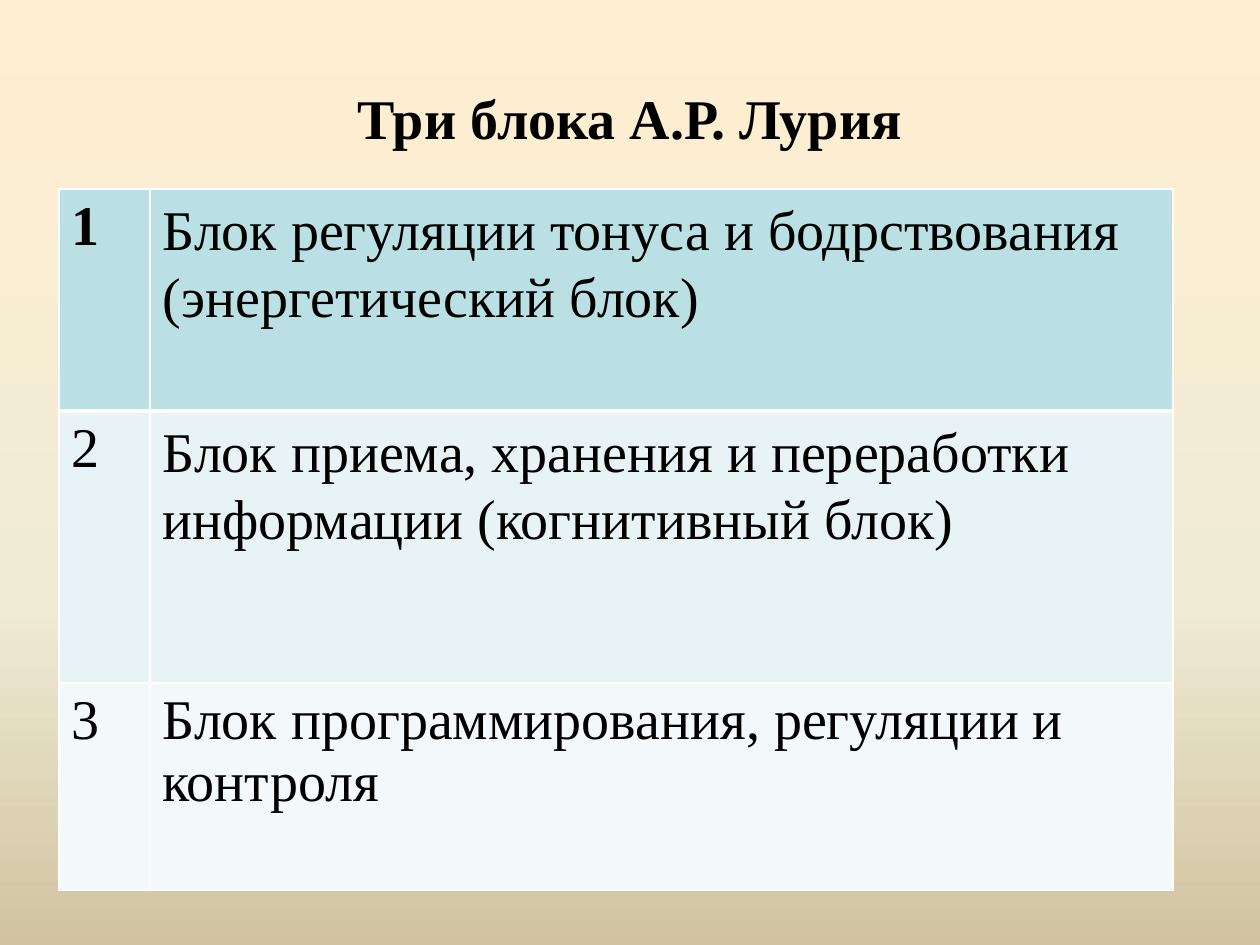
from copy import deepcopy

from lxml.etree import fromstring
from pptx import Presentation
from pptx.dml.color import RGBColor
from pptx.enum.text import MSO_ANCHOR, PP_ALIGN
from pptx.oxml.ns import nsdecls
from pptx.util import Emu, Pt

COLORS = {
    "cream": "FFEFD1",
    "ivory": "F0EBD5",
    "sand": "D1C39F",
    "text": "000000",
    "border": "FFFFFF",
}
BLOCKS = [
    ("Блок регуляции тонуса и бодрствования (энергетический блок)", 222, "BBE0E3"),
    ("Блок приема, хранения и переработки информации (когнитивный блок)", 272, "E7F3F4"),
    ("Блок программирования, регуляции и контроля", 207, "F3F9FA"),
]
COLUMN_WIDTHS = [91, 1023]


def px(value):
    return Emu(round(value * 914400 / 126))


def write(frame, text, bold):
    paragraph = frame.paragraphs[0]
    paragraph.text = text
    paragraph.font.name = "Times New Roman"
    paragraph.font.size = Pt(32)
    paragraph.font.bold = bold
    paragraph.font.color.rgb = RGBColor.from_string(COLORS["text"])
    return paragraph


deck = Presentation()
deck.slide_width, deck.slide_height = px(1260), px(945)
page = deck.slides.add_slide(deck.slide_layouts[6])

background = page.background.fill
background.gradient()
background.gradient_angle = 270
stop_list = page.element.xpath(".//a:gsLst")[0]
stop_list.append(deepcopy(stop_list[0]))
stops = [("cream", 0), ("ivory", 0.64), ("sand", 1)]
for stop, (name, position) in zip(background.gradient_stops, stops):
    stop.color.rgb = RGBColor.from_string(COLORS[name])
    stop.position = position

title = page.shapes.add_textbox(px(63), px(38), px(1134), px(158))
title.text_frame.word_wrap = True
title.text_frame.vertical_anchor = MSO_ANCHOR.MIDDLE
write(title.text_frame, "Три блока А.Р. Лурия", True).alignment = PP_ALIGN.CENTER

table = page.shapes.add_table(
    len(BLOCKS), 2, px(59), px(189), px(sum(COLUMN_WIDTHS)),
    px(sum(height for _, height, _ in BLOCKS)),
).table
for column, width in zip(table.columns, COLUMN_WIDTHS):
    column.width = px(width)

for row, (name, height, fill) in enumerate(BLOCKS):
    table.rows[row].height = px(height)
    for column, text in enumerate([str(row + 1), name]):
        cell = table.cell(row, column)
        cell.fill.solid()
        cell.fill.fore_color.rgb = RGBColor.from_string(fill)
        paragraph = write(cell.text_frame, text, row == 0 and column == 0)
        if column == 1 and row < 2:
            paragraph.line_spacing = 1.08
            paragraph.space_after = Pt(8)
        properties = cell._tc.get_or_add_tcPr()
        for index, side in enumerate("LRTB"):
            thick = (row, side) in [(0, "B"), (1, "T")]
            line = fromstring(
                f'<a:ln{side} {nsdecls("a")} w="{Pt(3 if thick else 1)}"><a:solidFill>'
                f'<a:srgbClr val="{COLORS["border"]}"/></a:solidFill></a:ln{side}>'
            )
            properties.insert(index, line)

deck.save("out.pptx")
